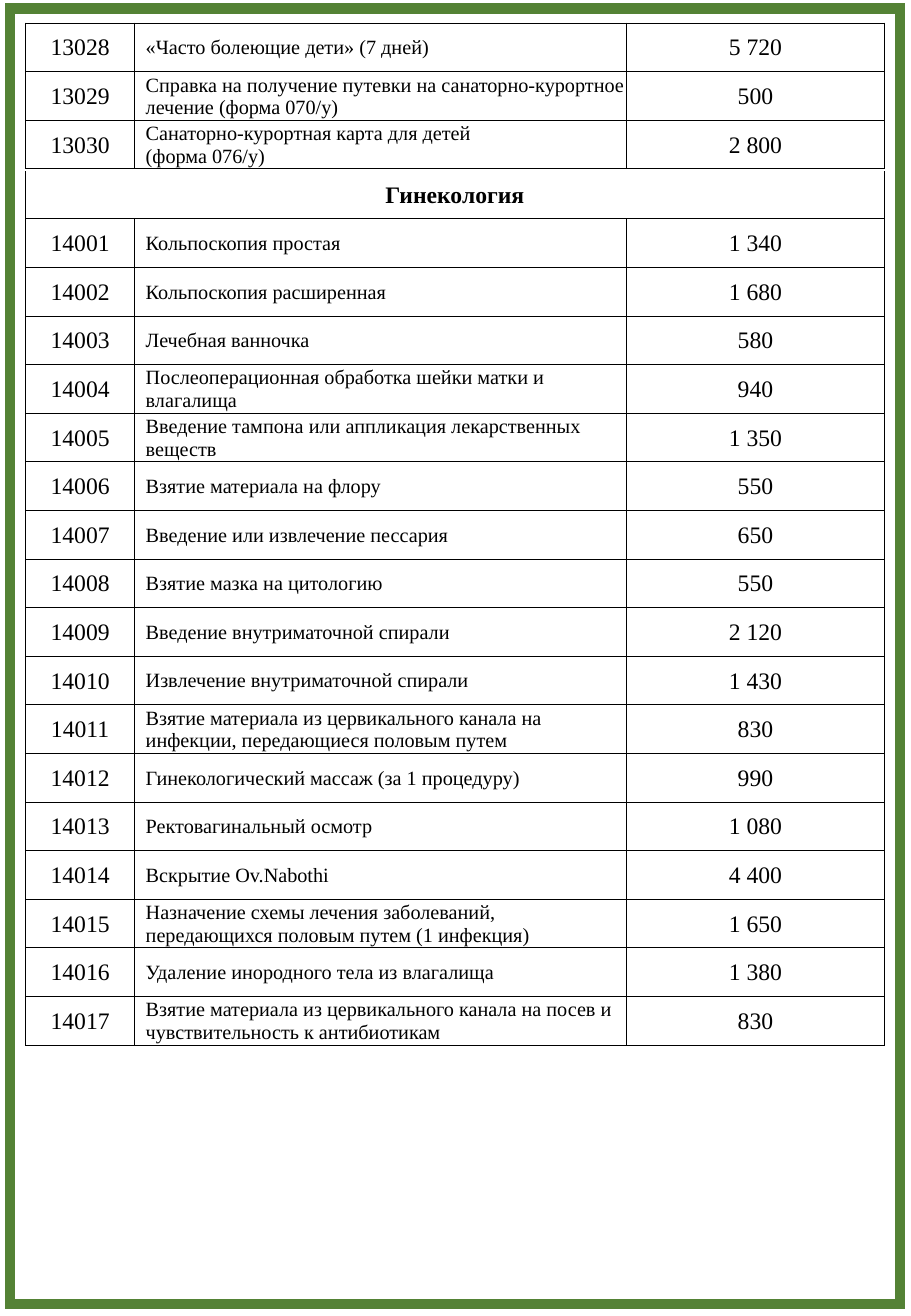
"""Builds a price list page: children's certificates and gynaecology services."""
from lxml import etree
from pptx import Presentation
from pptx.dml.color import RGBColor
from pptx.enum.shapes import MSO_SHAPE
from pptx.enum.text import MSO_ANCHOR, PP_ALIGN
from pptx.oxml.ns import qn
from pptx.util import Inches, Pt

RECTANGLE = MSO_SHAPE.RECTANGLE
MIDDLE = MSO_ANCHOR.MIDDLE
CENTER, LEFT = PP_ALIGN.CENTER, PP_ALIGN.LEFT

COLORS = {"frame": "548235", "text": "000000", "border": "000000"}
FONT = "Times New Roman"
TABLE_LEFT = 0.21
COLUMN_WIDTHS = (0.9, 4.05, 2.12)
ROW_HEIGHT = 0.4
BORDER_WIDTH = 0.5
SERVICE_INDENT = 0.08

CHILDREN = [
    ("13028", "«Часто болеющие дети» (7 дней)", "5 720"),
    ("13029", "Справка на получение путевки на санаторно-курортное лечение (форма 070/у)", "500"),
    ("13030", "Санаторно-курортная карта для детей\n(форма 076/у)", "2 800"),
]
GYNECOLOGY = [
    ("14001", "Кольпоскопия простая", "1 340"),
    ("14002", "Кольпоскопия расширенная", "1 680"),
    ("14003", "Лечебная ванночка", "580"),
    ("14004", "Послеоперационная обработка шейки матки и влагалища", "940"),
    ("14005", "Введение тампона или аппликация лекарственных веществ", "1 350"),
    ("14006", "Взятие материала на флору", "550"),
    ("14007", "Введение или извлечение пессария", "650"),
    ("14008", "Взятие мазка на цитологию", "550"),
    ("14009", "Введение внутриматочной спирали", "2 120"),
    ("14010", "Извлечение внутриматочной спирали", "1 430"),
    ("14011", "Взятие материала из цервикального канала на инфекции, "
              "передающиеся половым путем", "830"),
    ("14012", "Гинекологический массаж (за 1 процедуру)", "990"),
    ("14013", "Ректовагинальный осмотр", "1 080"),
    ("14014", "Вскрытие Ov.Nabothi", "4 400"),
    ("14015", "Назначение схемы лечения заболеваний, передающихся половым путем (1 инфекция)", "1 650"),
    ("14016", "Удаление инородного тела из влагалища", "1 380"),
    ("14017", "Взятие материала из цервикального канала на посев и "
              "чувствительность к антибиотикам", "830"),
]


def add_frame(slide):
    frame = slide.shapes.add_shape(
        RECTANGLE, Inches(0.08), Inches(0.07), Inches(7.33), Inches(10.66))
    frame.shadow.inherit = False
    frame.fill.background()
    frame.line.color.rgb = RGBColor.from_string(COLORS["frame"])
    frame.line.width = Pt(6)
    etree.SubElement(frame.line._get_or_add_ln(), qn("a:miter"), lim="800000")


def set_borders(cell, visible_sides):
    properties = cell._tc.get_or_add_tcPr()
    for side in "LRTB":
        border = etree.SubElement(properties, qn(f"a:ln{side}"), w=str(Pt(BORDER_WIDTH)))
        if side in visible_sides:
            fill = etree.SubElement(border, qn("a:solidFill"))
            etree.SubElement(fill, qn("a:srgbClr"), val=COLORS["border"])
        else:
            etree.SubElement(border, qn("a:noFill"))


def style_cell(cell, visible_sides="LRTB"):
    set_borders(cell, visible_sides)
    cell.fill.background()
    cell.vertical_anchor = MIDDLE
    cell.margin_left = cell.margin_right = cell.margin_top = Inches(0.01)
    cell.margin_bottom = 0


def write_cell(cell, text, size=14, align=CENTER, indent=0, bold=False):
    cell.text_frame.text = text
    for paragraph in cell.text_frame.paragraphs:
        paragraph.alignment = align
        paragraph._p.get_or_add_pPr().set("marL", str(Inches(indent)))
        for run in paragraph.runs:
            run.font.name = FONT
            run.font.size = Pt(size)
            run.font.bold = bold
            run.font.color.rgb = RGBColor.from_string(COLORS["text"])


def add_heading(prices, heading, visible_sides):
    cells = list(prices.rows[0].cells)
    for cell in cells:
        style_cell(cell, visible_sides)
        paragraph_end = cell.text_frame.paragraphs[0]._p.get_or_add_endParaRPr()
        paragraph_end.set("sz", "800")
    cells[0].merge(cells[-1])
    if heading:
        write_cell(cells[0], heading, bold=True)


def add_price_table(slide, top, heading_height, services, heading="", heading_sides="B"):
    heights = [heading_height] + [ROW_HEIGHT] * len(services)
    prices = slide.shapes.add_table(
        len(heights), len(COLUMN_WIDTHS), Inches(TABLE_LEFT), Inches(top),
        Inches(sum(COLUMN_WIDTHS)), Inches(sum(heights))).table
    prices.first_row = prices.horz_banding = False
    for column, width in zip(prices.columns, COLUMN_WIDTHS):
        column.width = Inches(width)
    for row, height in zip(prices.rows, heights):
        row.height = Inches(height)

    add_heading(prices, heading, heading_sides)
    for row, (code, service, price) in enumerate(services, 1):
        code_cell, service_cell, price_cell = prices.rows[row].cells
        for cell in (code_cell, service_cell, price_cell):
            style_cell(cell)
        write_cell(code_cell, code)
        write_cell(service_cell, service, 12, LEFT, SERVICE_INDENT)
        write_cell(price_cell, price)


def main():
    presentation = Presentation()
    presentation.slide_width = Inches(7.5)
    presentation.slide_height = Inches(10.83)
    slide = presentation.slides.add_slide(presentation.slide_layouts[6])
    add_frame(slide)
    add_price_table(slide, 0, 0.19, CHILDREN)
    add_price_table(slide, 1.41, 0.39, GYNECOLOGY, "Гинекология", "LRB")
    presentation.save("out.pptx")


if __name__ == "__main__":
    main()
